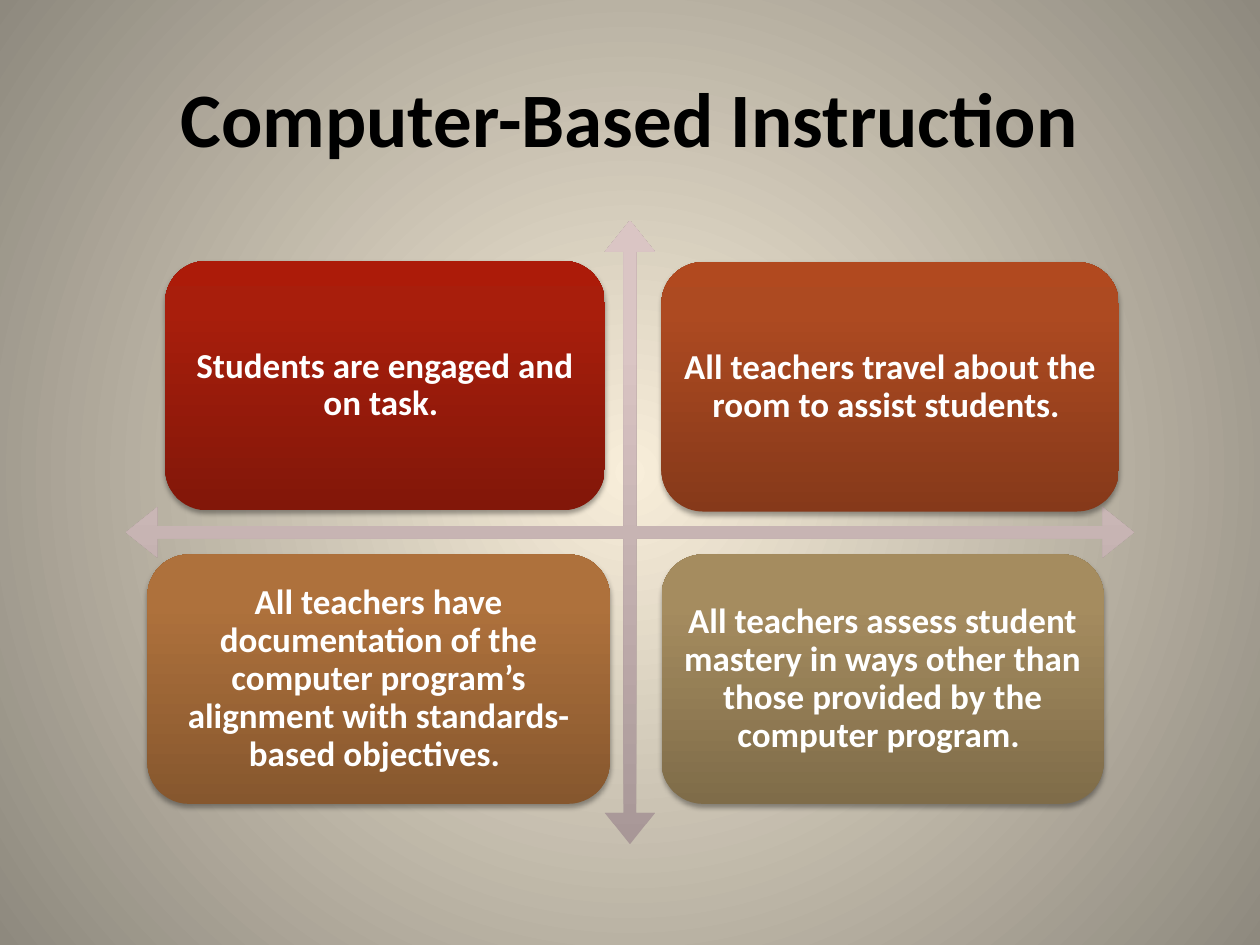
from dataclasses import dataclass

from lxml.etree import SubElement
from pptx import Presentation
from pptx.dml.color import RGBColor
from pptx.enum.shapes import MSO_SHAPE
from pptx.enum.text import MSO_ANCHOR, PP_ALIGN
from pptx.oxml.ns import qn
from pptx.util import Inches, Pt

COLUMNS, ROWS = 100, 75
CARD_HEIGHT = 19.8
CARDS = [
    (13.1, 20.7, 34.9, "red", "Students are engaged and on task. "),
    (52.5, 20.8, 36.3, "rust", "All teachers travel about the room to assist students. "),
    (11.7, 44, 36.7, "copper",
     "All teachers have documentation of the computer program’s alignment "
     "with standards-based objectives. "),
    (52.5, 44, 35.1, "olive",
     "All teachers assess student mastery in ways other than those provided "
     "by the computer program. "),
]


@dataclass(frozen=True)
class Theme:
    """Colours, font and type sizes of the slide."""
    font: str = "Calibri"
    title_size: int = 44
    card_size: int = 20
    title_colour: str = "000000"
    card_colour: str = "FFFFFF"
    backdrop: tuple = ((0, "F8EEDA"), (100, "8E897E"))
    axes: tuple = ((0, "A89797"), (80, "DAC5C4"), (100, "DBC5C4"))
    red: tuple = ((0, "821709"), (80, "A81E0C"), (100, "AC1B09"))
    rust: tuple = ((0, "86391A"), (80, "AD4A21"), (100, "B1491F"))
    copper: tuple = ((0, "86572E"), (80, "AE713C"), (100, "B1713A"))
    olive: tuple = ((0, "7F6C49"), (80, "A58C5F"), (100, "A78D5E"))


def add(parent, tag, **attributes):
    """Append an XML child with the given attributes and return it."""
    return SubElement(parent, qn(tag), {key: str(value) for key, value in attributes.items()})


def paint(properties, stops, radial=False):
    """Turn a solid fill into a radial or bottom-to-top gradient."""
    solid = properties.find(qn("a:solidFill"))
    gradient = add(properties, "a:gradFill", rotWithShape=1)
    properties.replace(solid, gradient)
    stop_list = add(gradient, "a:gsLst")
    for percent, colour in stops:
        stop = add(stop_list, "a:gs", pos=percent * 1000)
        add(stop, "a:srgbClr", val=colour)
    if radial:
        circle = add(gradient, "a:path", path="circle")
        add(circle, "a:fillToRect", l=50000, t=50000, r=50000, b=50000)
    else:
        add(gradient, "a:lin", ang=270 * 60000, scaled=0)


def write(box, text, *, font, size, colour, line_spacing=1.0):
    """Write bold centred text in the middle of a box."""
    frame = box.text_frame
    frame.word_wrap = True
    frame.vertical_anchor = MSO_ANCHOR.MIDDLE
    para = frame.paragraphs[0]
    para.alignment = PP_ALIGN.CENTER
    para.line_spacing = line_spacing
    span = para.add_run()
    span.text = text
    span.font.name, span.font.size, span.font.bold = font, Pt(size), True
    span.font.color.rgb = RGBColor.from_string(colour)


class SlideBuilder:
    """Holds the theme and the current slide."""

    def __init__(self, deck, theme):
        """Add a title-only page to the deck."""
        self.theme = theme
        self.column = deck.slide_width / COLUMNS
        self.row = deck.slide_height / ROWS
        self.page = deck.slides.add_slide(deck.slide_layouts[5])

    def place(self, left, top, width, height):
        """Convert grid units to slide lengths."""
        return (round(left * self.column), round(top * self.row),
                round(width * self.column), round(height * self.row))

    def backdrop(self):
        """Fill the page background with a radial gradient."""
        self.page.background.fill.solid()
        properties = next(self.page.element.iter(qn("p:bgPr")))
        paint(properties, self.theme.backdrop, radial=True)

    def title(self, text, *area):
        """Move and write the title placeholder."""
        box = self.page.shapes.title
        box.left, box.top, box.width, box.height = self.place(*area)
        write(box, text, font=self.theme.font, size=self.theme.title_size,
              colour=self.theme.title_colour)

    def shape(self, preset, stops, *area):
        """Add an outline-free preset shape with a gradient."""
        box = self.page.shapes.add_shape(preset, *self.place(*area))
        box.shadow.inherit = False
        box.line.fill.background()
        box.fill.solid()
        paint(box.element.spPr, stops)
        return box

    def axes(self, *area):
        """Add the thin four-way arrow."""
        arrow = self.shape(MSO_SHAPE.QUAD_ARROW, self.theme.axes, *area)
        for index, share in enumerate((0.02, 0.04, 0.05)):
            arrow.adjustments[index] = share

    def card(self, text, stops, *area):
        """Add a rounded card with a soft shadow and text."""
        box = self.shape(MSO_SHAPE.ROUNDED_RECTANGLE, stops, *area)
        effects = box.element.spPr.find(qn("a:effectLst"))
        shadow = add(effects, "a:outerShdw", blurRad=Pt(3.1), dist=Pt(1.8),
                     dir=90 * 60000, rotWithShape=0)
        add(add(shadow, "a:srgbClr", val="000000"), "a:alpha", val=35000)
        frame = box.text_frame
        frame.margin_left = frame.margin_right = 0
        frame.margin_top = frame.margin_bottom = 0
        write(box, text, font=self.theme.font, size=self.theme.card_size,
              colour=self.theme.card_colour, line_spacing=0.9)


def main():
    """Build and save the deck."""
    deck = Presentation()
    deck.slide_width, deck.slide_height = Inches(10), Inches(7.5)
    theme = Theme()
    builder = SlideBuilder(deck, theme)
    builder.backdrop()
    builder.title("Computer-Based Instruction", 5, 3, 90, 12.5)
    builder.axes(10, 17.5, 80, 49.5)
    for left, top, width, tone, text in CARDS:
        builder.card(text, getattr(theme, tone), left, top, width, CARD_HEIGHT)
    deck.save("out.pptx")


if __name__ == "__main__":
    main()
